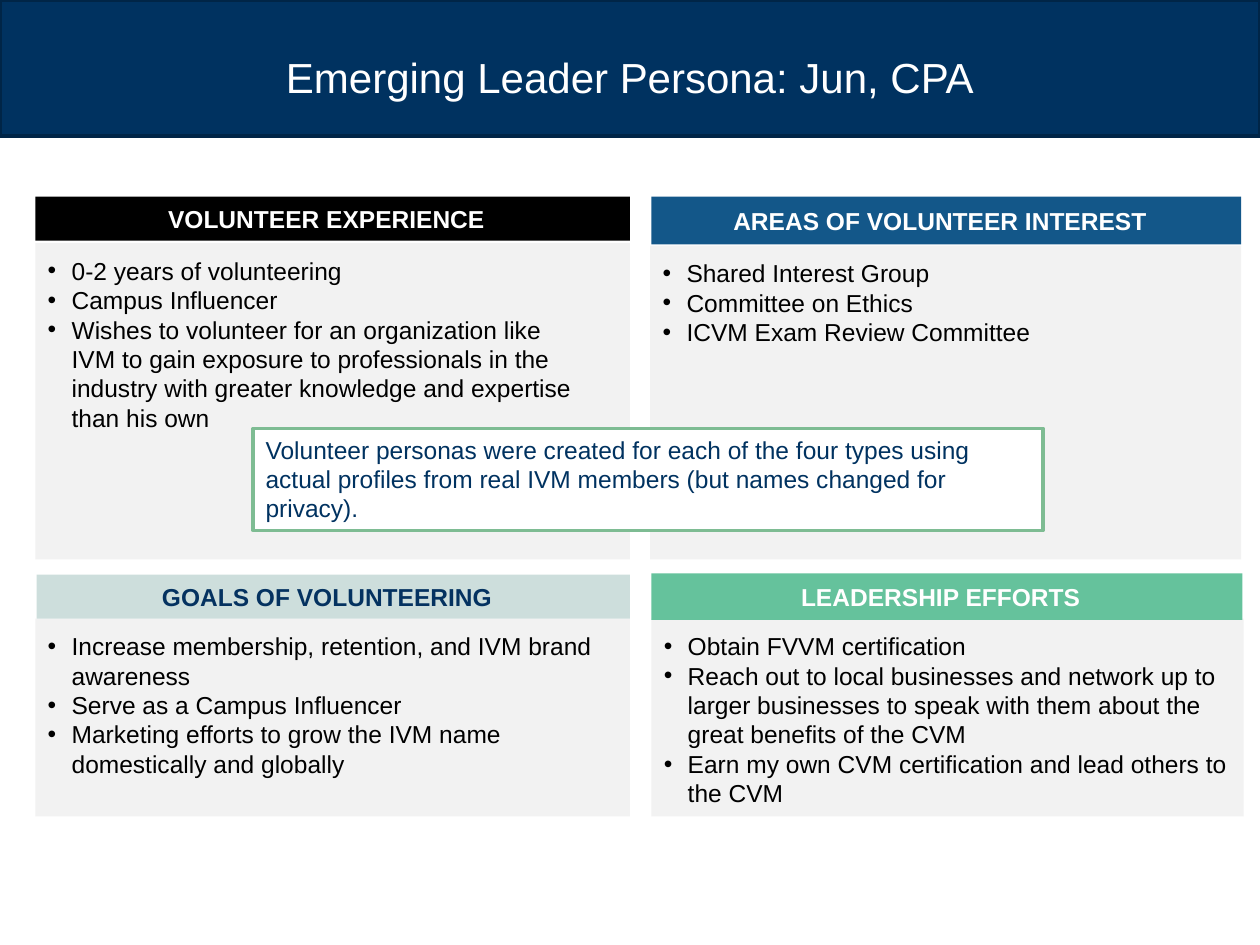
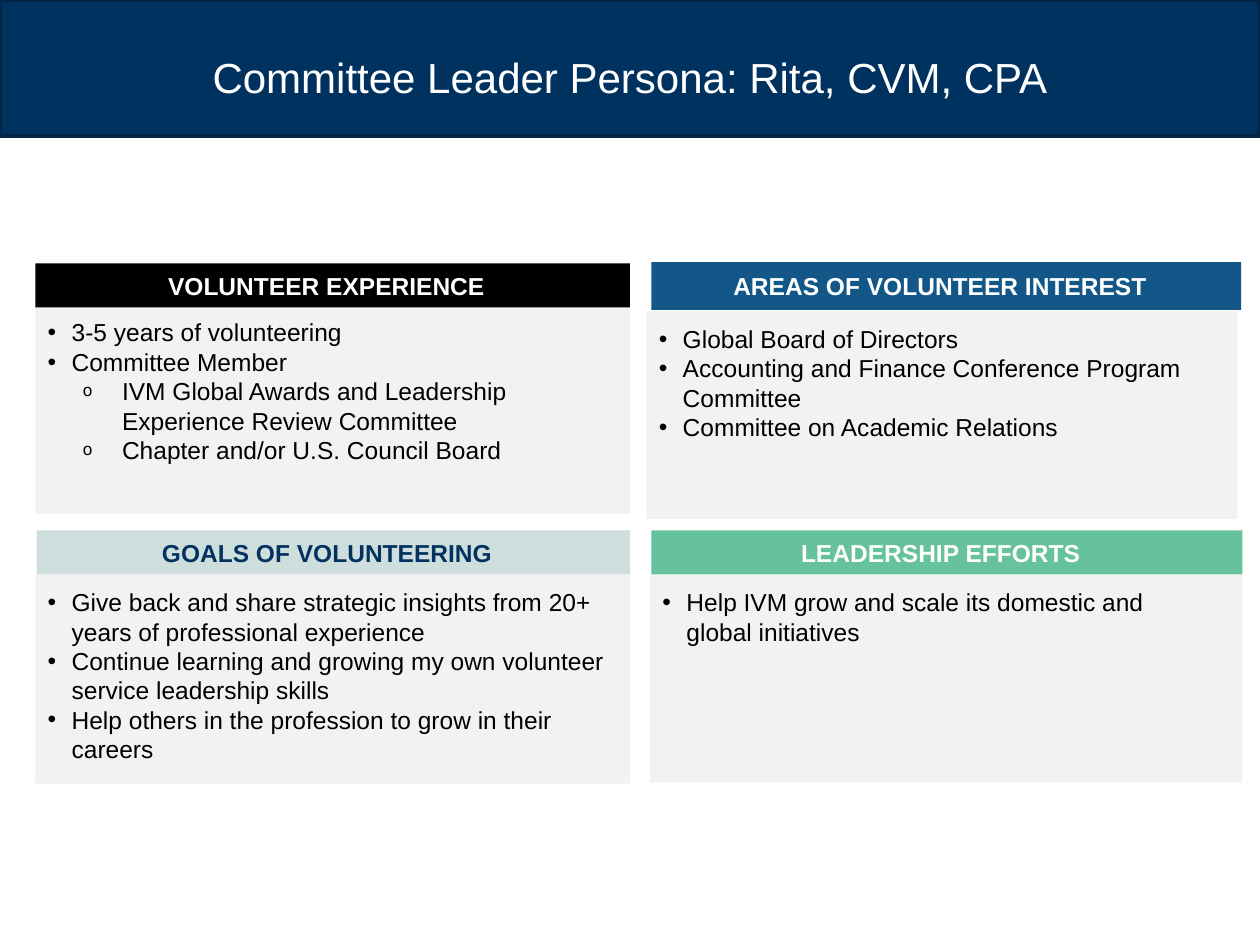
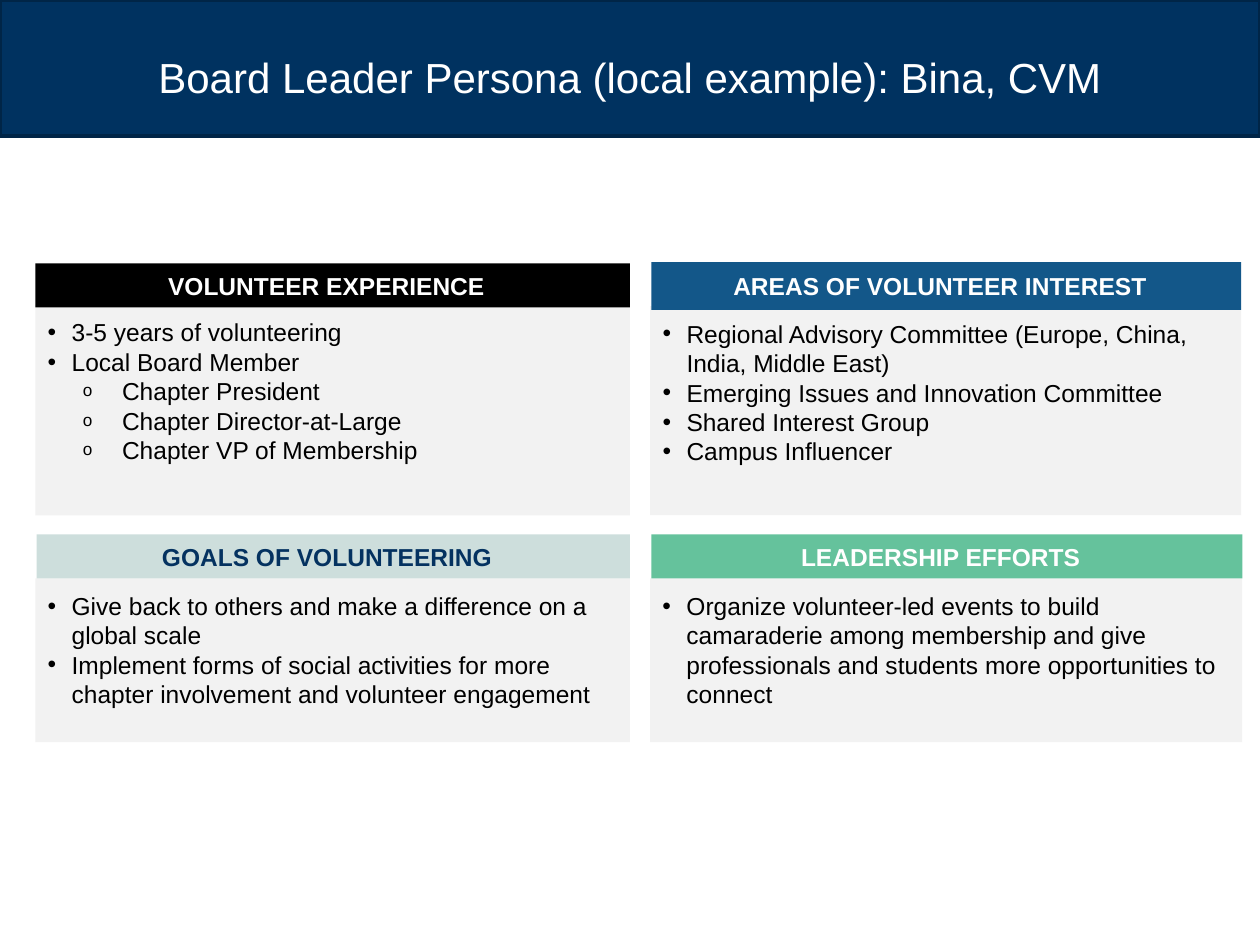
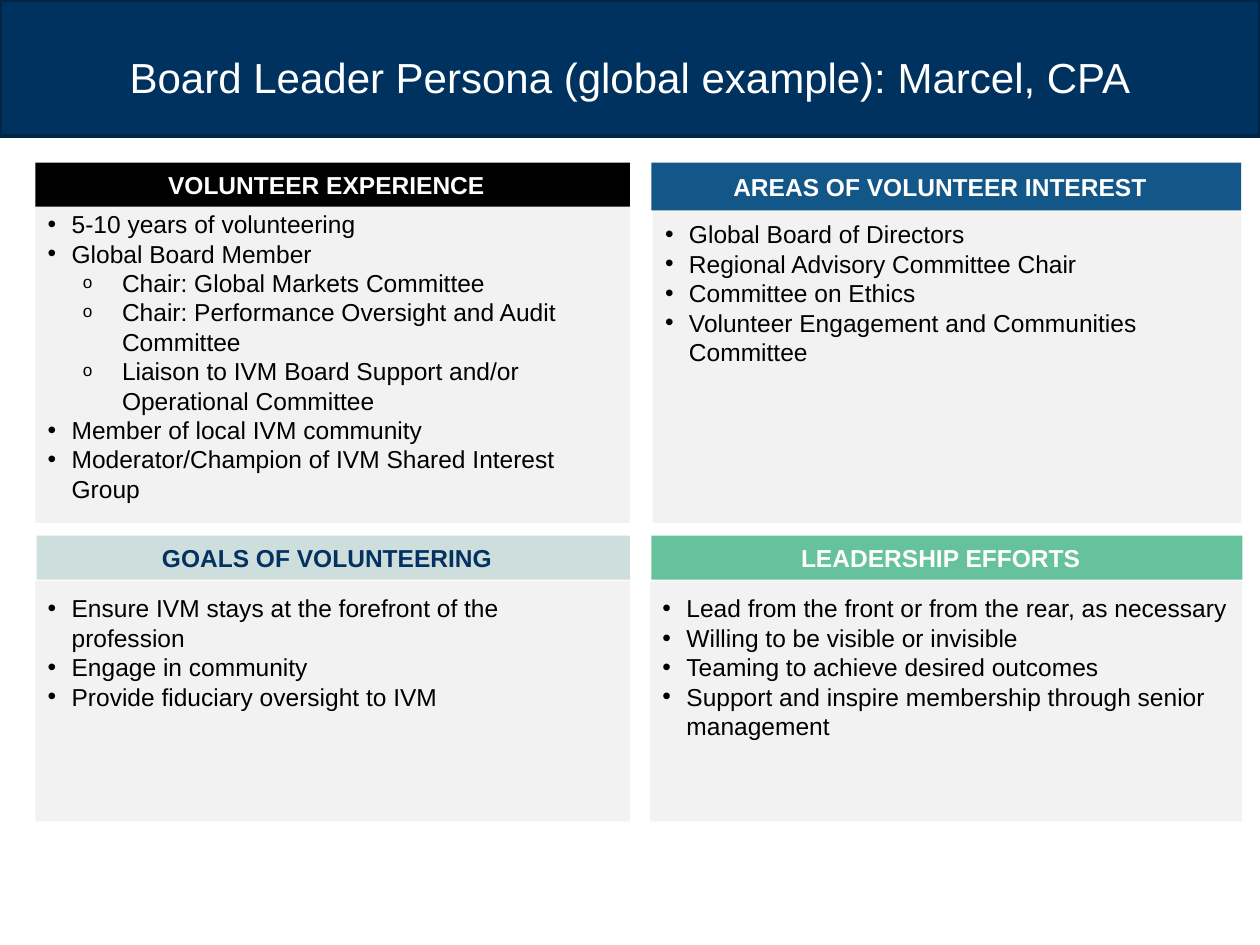
from dataclasses import dataclass
from typing import Optional

from lxml.etree import SubElement
from pptx import Presentation
from pptx.dml.color import RGBColor
from pptx.enum.shapes import MSO_SHAPE
from pptx.enum.text import MSO_ANCHOR, PP_ALIGN
from pptx.oxml.ns import qn
from pptx.util import Inches, Pt


# Theme: every colour, font and type size
@dataclass(frozen=True)
class Theme:
    font: str = "Arial"
    title_size: int = 24
    body_size: int = 14
    line_width: int = 2
    navy: str = "003260"
    navy_edge: str = "002547"
    goal_text: str = "043260"
    black: str = "000000"
    white: str = "FFFFFF"
    blue: str = "135789"
    mist: str = "CDDEDC"
    mint: str = "65C29C"
    callout_edge: str = "7EBC93"
    panel: str = "F2F2F2"


THEME = Theme()


# The four sections that each persona has
@dataclass(frozen=True)
class Section:
    heading: str
    fill: str
    color: str
    left: float
    width: float
    height: float
    body_left: float
    body_width: float


SECTIONS = (
    Section("VOLUNTEER EXPERIENCE", THEME.black, THEME.white,
            0.28, 4.72, 0.35, 0.28, 4.72),
    Section("AREAS OF VOLUNTEER INTEREST", THEME.blue, THEME.white,
            5.17, 4.68, 0.38, 5.16, 4.69),
    Section("GOALS OF VOLUNTEERING", THEME.mist, THEME.goal_text,
            0.29, 4.71, 0.35, 0.28, 4.72),
    Section("LEADERSHIP EFFORTS", THEME.mint, THEME.white,
            5.17, 4.69, 0.35, 5.16, 4.7),
)


# What one persona puts in a section; a nested list holds sub-bullets
@dataclass(frozen=True)
class Panel:
    heading_top: float
    body_top: float
    body_height: float
    bullets: list
    body_left: Optional[float] = None
    body_width: Optional[float] = None
    heading_height: Optional[float] = None


PERSONAS = {
    "Emerging Leader Persona: Jun, CPA": (
        Panel(1.56, 1.93, 2.51, [
            "0-2 years of volunteering",
            "Campus Influencer",
            "Wishes to volunteer for an organization like \v"
            "IVM to gain exposure to professionals in the industry "
            "with greater knowledge and expertise than his own"]),
        Panel(1.56, 1.95, 2.49, [
            "Shared Interest Group",
            "Committee on Ethics",
            "ICVM Exam Review Committee"]),
        Panel(4.56, 4.91, 1.57, [
            "Increase membership, retention, and IVM brand awareness",
            "Serve as a Campus Influencer",
            "Marketing efforts to grow the IVM name domestically and globally"]),
        Panel(4.55, 4.91, 1.57, [
            "Obtain FVVM certification",
            "Reach out to local businesses and network up to larger businesses "
            "to speak with them about the great benefits of the CVM",
            "Earn my own CVM certification and lead others to the CVM"],
            body_left=5.17, heading_height=0.37),
    ),
    "Committee Leader Persona: Rita, CVM, CPA": (
        Panel(2.09, 2.42, 1.66, [
            "3-5 years of volunteering",
            "Committee Member",
            ["IVM Global Awards and Leadership Experience Review Committee",
             "Chapter and/or U.S. Council Board"]]),
        Panel(2.08, 2.47, 1.65, [
            "Global Board of Directors",
            "Accounting and Finance Conference Program Committee",
            "Committee on Academic Relations"], body_left=5.13),
        Panel(4.21, 4.56, 1.66, [
            "Give back and share strategic insights from 20+ years of "
            "professional experience",
            "Continue learning and growing my own volunteer service "
            "leadership skills",
            "Help others in the profession to grow in their careers"]),
        Panel(4.21, 4.56, 1.65, [
            "Help IVM grow and scale its domestic and \vglobal initiatives"]),
    ),
    "Board Leader Persona (local example): Bina, CVM": (
        Panel(2.09, 2.42, 1.67, [
            "3-5 years of volunteering",
            "Local Board Member",
            ["Chapter President",
             "Chapter Director-at-Large",
             "Chapter VP of Membership"]]),
        Panel(2.08, 2.43, 1.66, [
            "Regional Advisory Committee (Europe, China, India, Middle East)",
            "Emerging Issues and Innovation Committee",
            "Shared Interest Group",
            "Campus Influencer"]),
        Panel(4.24, 4.59, 1.3, [
            "Give back to others and make a difference on a global scale",
            "Implement forms of social activities for more chapter involvement "
            "and volunteer engagement"]),
        Panel(4.24, 4.59, 1.3, [
            "Organize volunteer-led events to build camaraderie among "
            "membership and give professionals and students more "
            "opportunities to connect"]),
    ),
    "Board Leader Persona (global example): Marcel, CPA": (
        Panel(1.29, 1.56, 2.59, [
            "5-10 years of volunteering",
            "Global Board Member",
            ["Chair: Global Markets Committee",
             "Chair: Performance Oversight and Audit Committee",
             "Liaison to IVM Board Support and/or Operational Committee"],
            "Member of local IVM community",
            "Moderator/Champion of IVM Shared Interest Group"]),
        Panel(1.29, 1.64, 2.51, [
            "Global Board of Directors",
            "Regional Advisory Committee Chair",
            "Committee on Ethics",
            "Volunteer Engagement and Communities Committee"],
            body_left=5.18, body_width=4.67),
        Panel(4.25, 4.61, 1.91, [
            "Ensure IVM stays at the forefront of the profession",
            "Engage in community",
            "Provide fiduciary oversight to IVM"]),
        Panel(4.25, 4.61, 1.91, [
            "Lead from the front or from the rear, as necessary",
            "Willing to be visible or invisible",
            "Teaming to achieve desired outcomes",
            "Support and inspire membership through senior management"]),
    ),
}

CALLOUT = ("Volunteer personas were created for each of the four types using "
           "actual profiles from real IVM members (but names changed for privacy).")


# Text helpers
def add_bullet(paragraph, level):
    margin, hanging, mark = ((0.19, 0.19, "•"), (0.59, 0.31, "o"))[level]
    paragraph.level = level
    props = paragraph._p.get_or_add_pPr()
    props.set("marL", str(Inches(margin)))
    props.set("indent", str(-Inches(hanging)))
    SubElement(SubElement(props, qn("a:buClr")), qn("a:srgbClr"), val=THEME.black)
    if level:
        SubElement(props, qn("a:buSzPct"), val="70000")
    SubElement(props, qn("a:buFont"), typeface=THEME.font)
    SubElement(props, qn("a:buChar"), char=mark)


def write_text(paragraph, text, *, size=THEME.body_size, color=THEME.black,
               bold=False, align=PP_ALIGN.LEFT, bullet_level=None):
    paragraph.text = text
    paragraph.alignment = align
    if bullet_level is not None:
        add_bullet(paragraph, bullet_level)
    for run in paragraph.runs:
        run.font.name = THEME.font
        run.font.size = Pt(size)
        run.font.bold = bold
        run.font.color.rgb = RGBColor.from_string(color)
    for line_break in paragraph._p.findall(qn("a:br")):
        SubElement(line_break, qn("a:rPr"), sz=str(size * 100))


def flatten(bullets):
    for entry in bullets:
        if isinstance(entry, list):
            yield from ((text, 1) for text in entry)
        else:
            yield entry, 0


class PersonaDeck:
    def __init__(self, theme):
        self.theme = theme
        self.deck = Presentation()
        self.deck.slide_width = Inches(10)
        self.deck.slide_height = Inches(7.5)
        self.slide = None

    def new_slide(self, title):
        self.slide = self.deck.slides.add_slide(self.deck.slide_layouts[6])
        self.box(0, 0, 10, 1.08, self.theme.navy, edge=self.theme.navy_edge)
        self.title(title)

    def frame(self, shape, anchor, insets=(0.1, 0.05, 0.1, 0.05)):
        frame = shape.text_frame
        frame.word_wrap = True
        frame.vertical_anchor = anchor
        (frame.margin_left, frame.margin_top,
         frame.margin_right, frame.margin_bottom) = map(Inches, insets)
        return frame

    def box(self, left, top, width, height, fill, edge=None):
        shape = self.slide.shapes.add_shape(
            MSO_SHAPE.RECTANGLE, *map(Inches, (left, top, width, height)))
        shape.shadow.inherit = False
        shape.fill.solid()
        shape.fill.fore_color.rgb = RGBColor.from_string(fill)
        if edge:
            shape.line.color.rgb = RGBColor.from_string(edge)
            shape.line.width = Pt(self.theme.line_width)
        else:
            shape.line.fill.background()
        return shape

    def title(self, text):
        shape = self.slide.shapes.add_textbox(*map(Inches, (0.5, 0.13, 9, 0.95)))
        frame = self.frame(shape, MSO_ANCHOR.MIDDLE)
        write_text(frame.paragraphs[0], text, size=self.theme.title_size,
                   color=self.theme.white, align=PP_ALIGN.CENTER)

    def body(self, section, panel):
        left = panel.body_left or section.body_left
        width = panel.body_width or section.body_width
        shape = self.box(left, panel.body_top, width,
                         panel.body_height, self.theme.panel)
        frame = self.frame(shape, MSO_ANCHOR.TOP, (0.1, 0.1, 0.1, 0.05))
        for index, (text, level) in enumerate(flatten(panel.bullets)):
            paragraph = frame.add_paragraph() if index else frame.paragraphs[0]
            write_text(paragraph, text, bullet_level=level)

    def heading(self, section, panel):
        height = panel.heading_height or section.height
        shape = self.box(section.left, panel.heading_top, section.width,
                         height, section.fill)
        frame = self.frame(shape, MSO_ANCHOR.MIDDLE, (0, 0.05, 0.1, 0.05))
        write_text(frame.paragraphs[0], section.heading, color=section.color,
                   bold=True, align=PP_ALIGN.CENTER)

    def callout(self, text):
        shape = self.box(2.01, 3.4, 6.27, 0.81, self.theme.white,
                         edge=self.theme.callout_edge)
        frame = self.frame(shape, MSO_ANCHOR.TOP)
        write_text(frame.paragraphs[0], text, color=self.theme.navy)


def main():
    personas = PersonaDeck(THEME)
    for number, (title, panels) in enumerate(PERSONAS.items()):
        personas.new_slide(title)
        # Headings lie over the top edge of the bodies
        for section, panel in zip(SECTIONS, panels):
            personas.body(section, panel)
        for section, panel in zip(SECTIONS, panels):
            personas.heading(section, panel)
        if number == 0:
            personas.callout(CALLOUT)
    personas.deck.save("out.pptx")


if __name__ == "__main__":
    main()
